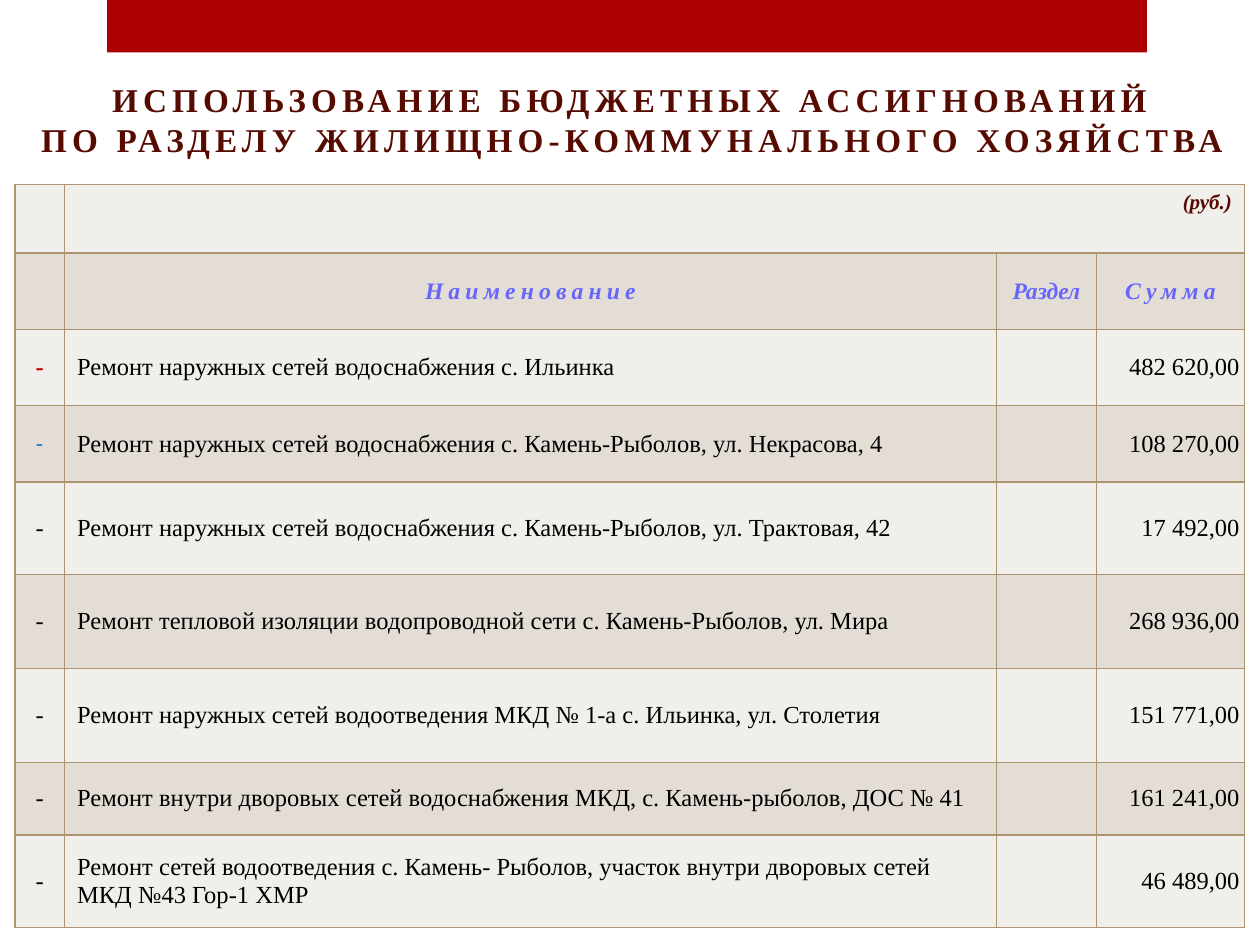
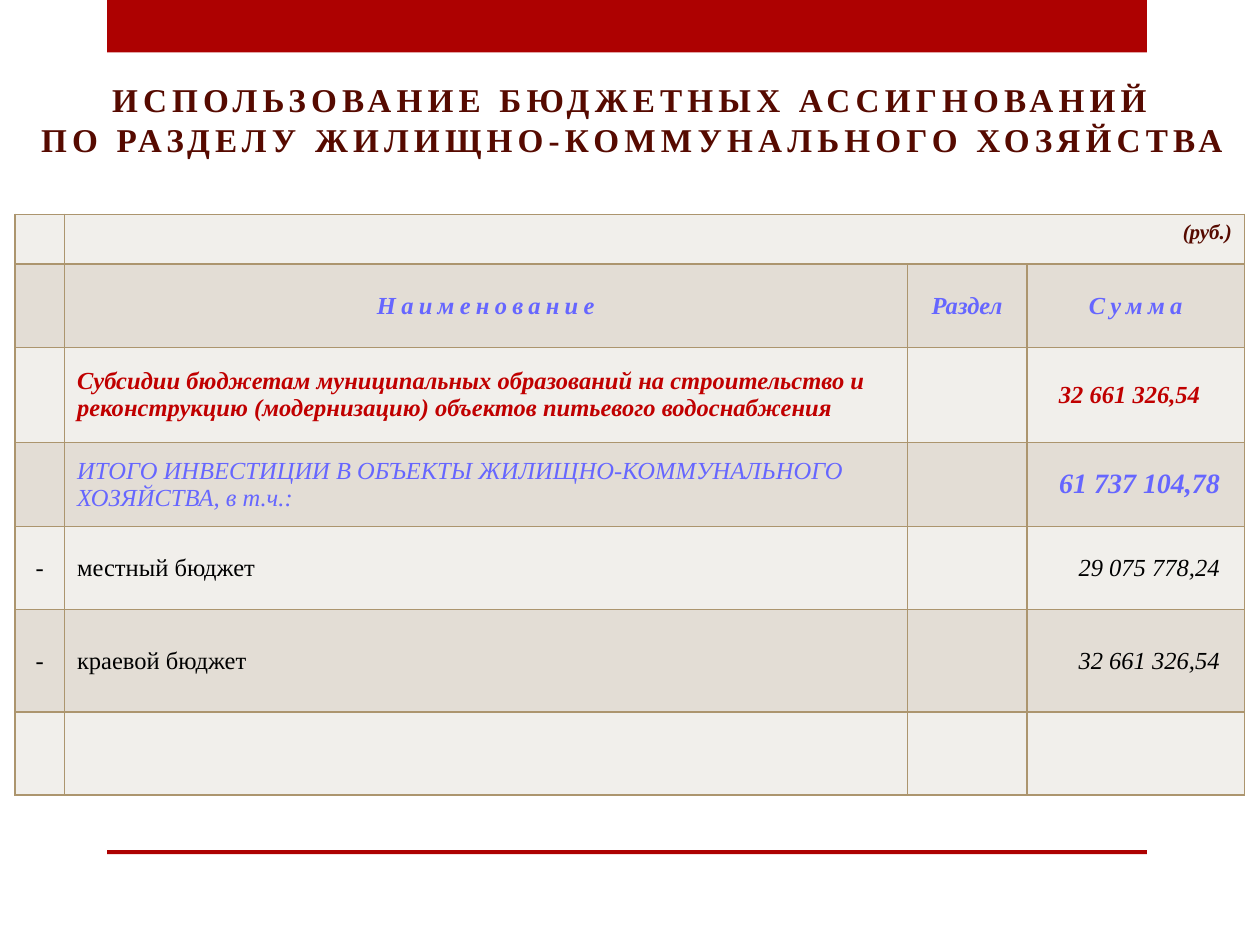
from lxml.etree import SubElement
from pptx import Presentation
from pptx.dml.color import RGBColor
from pptx.enum.shapes import MSO_SHAPE
from pptx.enum.text import MSO_ANCHOR, PP_ALIGN
from pptx.oxml import parse_xml
from pptx.oxml.ns import nsdecls, qn
from pptx.util import Cm, Pt

RED = RGBColor(0xAD, 0x01, 0x01)
MAROON = RGBColor(0x56, 0x0A, 0x00)
VIOLET = RGBColor(0x66, 0x66, 0xFF)
CRIMSON = RGBColor(0xC0, 0x00, 0x00)
BLUE = RGBColor(0x00, 0x70, 0xC0)
BLACK = RGBColor(0x00, 0x00, 0x00)
BORDER = RGBColor(0xAC, 0x95, 0x6E)
ROW_FILLS = (RGBColor(0xF1, 0xEF, 0xEB), RGBColor(0xE3, 0xDD, 0xD5))

FONT = "Times New Roman"
TITLE = ("ИСПОЛЬЗОВАНИЕ БЮДЖЕТНЫХ АССИГНОВАНИЙ\v"
         "ПО РАЗДЕЛУ ЖИЛИЩНО-КОММУНАЛЬНОГО ХОЗЯЙСТВА")
TITLE_BOX = (0.41, 1.12, 24.69, 2.21)
TOP_BAND = (2.16, 0, 20.96, 1.06)
BOTTOM_LINE = (2.16, 17.14, 20.96, 0.08)

# Text styles: font attributes, plus letter spacing in points
BODY = dict(size=Pt(14), color=BLACK, bold=False, italic=False, spacing=0)
ITALIC = BODY | dict(italic=True)
STRONG = ITALIC | dict(bold=True)
TITLE_STYLE = BODY | dict(size=Pt(19), color=MAROON, bold=True, spacing=3)
UNIT = STRONG | dict(size=Pt(12), color=MAROON)
HEAD = STRONG | dict(color=VIOLET)
SUBSIDY = STRONG | dict(color=CRIMSON)

LEFT, CENTER, RIGHT = PP_ALIGN.LEFT, PP_ALIGN.CENTER, PP_ALIGN.RIGHT
COLUMN_ALIGN = (CENTER, LEFT, CENTER, RIGHT)

# Each row: mark, name, sum; a cell is text or (text, style[, alignment])
REPAIRS = [
    (("-", BODY | dict(color=CRIMSON, bold=True)),
     "Ремонт наружных сетей водоснабжения с. Ильинка", "482 620,00"),
    (("-", ITALIC | dict(size=Pt(12), color=BLUE)),
     "Ремонт наружных сетей водоснабжения с. Камень-Рыболов, ул. Некрасова, 4",
     "108 270,00"),
    ("-", "Ремонт наружных сетей водоснабжения с. Камень-Рыболов, ул. Трактовая, 42",
     "17 492,00"),
    ("-", "Ремонт тепловой изоляции водопроводной сети с. Камень-Рыболов, ул. Мира",
     "268 936,00"),
    ("-", "Ремонт наружных сетей водоотведения МКД № 1-а с. Ильинка, ул. Столетия",
     "151 771,00"),
    ("-", "Ремонт внутри дворовых сетей водоснабжения МКД, с. Камень-рыболов, ДОС № 41",
     "161 241,00"),
    ("-", "Ремонт сетей водоотведения с. Камень- Рыболов, участок внутри дворовых "
          "сетей МКД №43 Гор-1 ХМР", "46 489,00"),
]
TOTALS = [
    ("", ("Субсидии бюджетам муниципальных образований на строительство и "
          "реконструкцию (модернизацию) объектов питьевого водоснабжения", SUBSIDY),
     ("32 661 326,54", SUBSIDY, CENTER)),
    ("", ("ИТОГО ИНВЕСТИЦИИ В ОБЪЕКТЫ ЖИЛИЩНО-КОММУНАЛЬНОГО ХОЗЯЙСТВА, в т.ч.:",
          ITALIC | dict(color=VIOLET)),
     ("61 737 104,78", HEAD | dict(size=Pt(16)))),
    ("-", "местный бюджет", ("29 075 778,24", ITALIC)),
    ("-", "краевой бюджет", ("32 661 326,54", ITALIC)),
    ("", "", ""),
]


def write(tf, text, style, align):
    p = tf.paragraphs[0]
    p.text = text
    p.alignment = align
    for r in p.runs:
        r.font.name = FONT
        for name, value in style.items():
            if name == "color":
                r.font.color.rgb = value
            elif name == "spacing":
                r._r.get_or_add_rPr().set("spc", str(value * 100))
            else:
                setattr(r.font, name, value)


def add_bar(s, box):
    sp = s.shapes.add_shape(MSO_SHAPE.RECTANGLE, *map(Cm, box))
    sp.shadow.inherit = False
    sp.fill.solid()
    sp.fill.fore_color.rgb = RED
    sp.line.fill.background()


def add_title(s, box):
    tf = s.shapes.add_textbox(*map(Cm, box)).text_frame
    tf.word_wrap = True
    tf.margin_left = tf.margin_right = Cm(0.1)
    tf.vertical_anchor = MSO_ANCHOR.BOTTOM
    write(tf, TITLE, TITLE_STYLE, CENTER)


def add_borders(cell):
    tc_pr = cell._tc.get_or_add_tcPr()
    for i, side in enumerate("LRTB"):
        ln = parse_xml(f'<a:ln{side} {nsdecls("a")} w="{Pt(1)}"/>')
        fill = SubElement(ln, qn("a:solidFill"))
        SubElement(fill, qn("a:srgbClr")).set("val", str(BORDER))
        tc_pr.insert(i, ln)


def fill_cell(cell, content, align, style=BODY, sum_margin=None):
    if not content:
        cell.margin_top = cell.margin_bottom = 0
        return
    if isinstance(content, tuple):
        content, style, *override = content
        align = override[0] if override else align
    if sum_margin is not None:
        cell.margin_right = Cm(sum_margin)
    cell.vertical_anchor = MSO_ANCHOR.MIDDLE
    write(cell.text_frame, content, style, align)


def add_budget_table(s, left, top, widths, heights, rows, head_size, sum_margin):
    frame = s.shapes.add_table(len(heights), len(widths), Cm(left), Cm(top),
                               Cm(sum(widths)), Cm(sum(heights)))
    table = frame.table
    table.first_row = table.horz_banding = False
    for column, width in zip(table.columns, widths):
        column.width = Cm(width)
    for i, (row, height) in enumerate(zip(table.rows, heights)):
        row.height = Cm(height)
        for cell in row.cells:
            cell.fill.solid()
            cell.fill.fore_color.rgb = ROW_FILLS[i % 2]
            add_borders(cell)

    # Unit row
    unit = table.cell(0, 1)
    unit.merge(table.cell(0, 3))
    write(unit.text_frame, "(руб.)", UNIT, RIGHT)
    fill_cell(table.cell(0, 0), "", CENTER)

    # Column headings
    head = HEAD | dict(size=Pt(head_size))
    spaced = head | dict(spacing=3)
    headings = ("", ("Наименование", spaced), ("Раздел", head), ("Сумма", spaced))
    for j, heading in enumerate(headings):
        fill_cell(table.cell(1, j), heading, CENTER)

    # Budget lines, with the section column left empty
    for i, (mark, name, amount) in enumerate(rows, start=2):
        for j, content in enumerate((mark, name, "", amount)):
            fill_cell(table.cell(i, j), content, COLUMN_ALIGN[j],
                      sum_margin=sum_margin if j == 3 else None)


def add_budget_slide(prs, **table):
    s = prs.slides.add_slide(prs.slide_layouts[6])
    add_bar(s, TOP_BAND)
    add_title(s, TITLE_BOX)
    add_budget_table(s, left=0.3, **table)
    return s


def main():
    prs = Presentation()
    prs.slide_width, prs.slide_height = Cm(25.4), Cm(19.05)

    # Repairs
    add_budget_slide(
        prs, top=3.72, widths=(1, 18.79, 2.01, 2.99),
        heights=(1.38, 1.54, 1.54, 1.54, 1.86, 1.9, 1.89, 1.46, 1.87),
        rows=REPAIRS, head_size=13.5, sum_margin=0.1)

    # Totals: the shorter table leaves room for the bottom line
    s = add_budget_slide(
        prs, top=4.32, widths=(1, 16.99, 2.41, 4.39),
        heights=(1, 1.69, 1.91, 1.69, 1.68, 2.06, 1.68),
        rows=TOTALS, head_size=14, sum_margin=0.5)
    add_bar(s, BOTTOM_LINE)

    prs.save("out.pptx")


if __name__ == "__main__":
    main()
